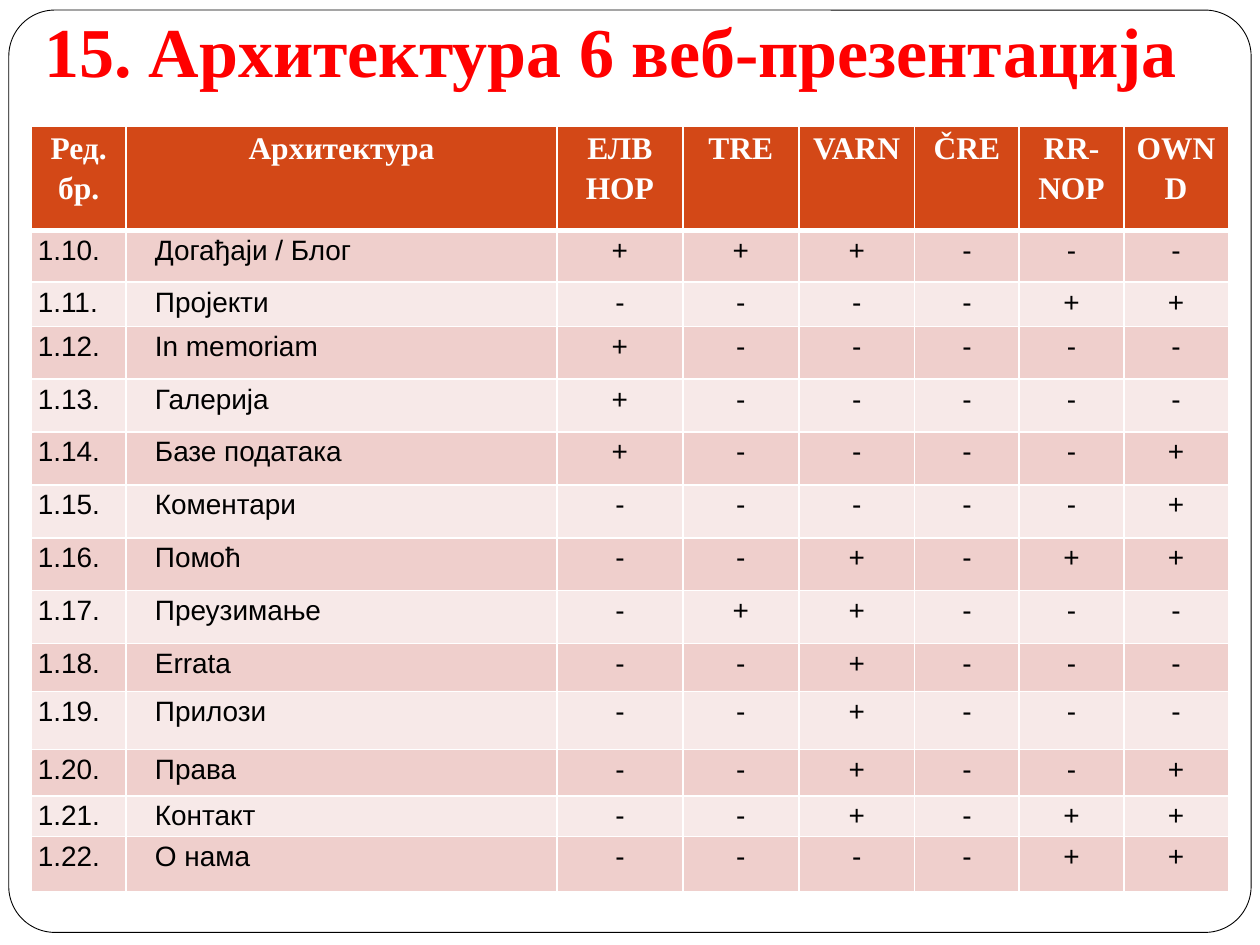
from lxml import etree
from pptx import Presentation, util as u
from pptx.dml.color import RGBColor
from pptx.enum import shapes, text
from pptx.oxml.ns import qn

TITLE = "15. Архитектура 6 веб-презентација"
HEADINGS = ["Ред.\nбр.", "Архитектура", "ЕЛВ\nНОР", "TRE", "VARN", "ČRE", "RR-NOP", "OWND"]
FIRST_NUMBER = 10
FEATURES = [
    ("Догађаји / Блог", "+++---", 0.41),
    ("Пројекти", "----++", 0.35),
    ("In memoriam", "+-----", 0.42),
    ("Галерија", "+-----", 0.42),
    ("Базе података", "+----+", 0.42),
    ("Коментари", "-----+", 0.42),
    ("Помоћ", "--+-++", 0.42),
    ("Преузимање", "-++---", 0.42),
    ("Errata", "--+---", 0.38),
    ("Прилози", "--+---", 0.46),
    ("Права", "--+--+", 0.37),
    ("Контакт", "--+-++", 0.32),
    ("О нама", "----++", 0.44),
]
COLUMN_WIDTHS = [0.75, 3.42, 1, 0.92, 0.92, 0.83, 0.83, 0.83]
HEADER_HEIGHT = 0.83

WHITE = RGBColor(0xFF, 0xFF, 0xFF)
BLACK = RGBColor(0, 0, 0)
RED = RGBColor(0xFF, 0, 0)
ORANGE = RGBColor(0xD3, 0x48, 0x17)
BANDS = [RGBColor(0xEF, 0xCF, 0xCC), RGBColor(0xF7, 0xE9, 0xE8)]


def style_font(font, name, size, color, bold):
    font.name, font.size, font.bold = name, u.Pt(size), bold
    font.color.rgb = color


def set_margins(holder, left, top, right, bottom):
    holder.margin_left, holder.margin_top = u.Inches(left), u.Inches(top)
    holder.margin_right, holder.margin_bottom = u.Inches(right), u.Inches(bottom)


def add_border(cell, side, points):
    properties = cell._tc.get_or_add_tcPr()
    line = etree.SubElement(properties, qn(f"a:ln{side}"), w=str(u.Pt(points)))
    fill = etree.SubElement(line, qn("a:solidFill"))
    etree.SubElement(fill, qn("a:srgbClr"), val=str(WHITE))


def fill_cell(cell, words, row, column):
    header = row == 0
    cell.text_frame.text = words
    indent = 0.18 if column == 1 and not header else 0
    set_margins(cell, 0.05 + indent, 0, 0.05, 0)
    for side in "LRTB":
        beside_header = (row, side) in [(0, "B"), (1, "T")]
        add_border(cell, side, 3 if beside_header else 1)
    cell.fill.solid()
    cell.fill.fore_color.rgb = ORANGE if header else BANDS[(row - 1) % 2]
    for paragraph in cell.text_frame.paragraphs:
        centred = header or column > 1
        paragraph.alignment = text.PP_ALIGN.CENTER if centred else text.PP_ALIGN.LEFT
        paragraph.line_spacing = 1.15
        for span in paragraph.runs:
            if header:
                style_font(span.font, "Times New Roman", 18, WHITE, True)
            else:
                style_font(span.font, "Arial", 16, BLACK, False)


def add_frame(page):
    box = page.shapes.add_shape(
        shapes.MSO_SHAPE.ROUNDED_RECTANGLE,
        u.Inches(0.07), u.Inches(0.08), u.Inches(9.86), u.Inches(7.32))
    box.adjustments[0] = 0.05
    box.shadow.inherit = False
    box.fill.solid()
    box.fill.fore_color.rgb = WHITE
    box.line.color.rgb = BLACK
    box.line.width = u.Pt(0.5)
    page.shapes.title.element.addprevious(box.element)


def set_title(page):
    title = page.shapes.title
    title.left, title.top = u.Inches(0.25), 0
    title.width, title.height = u.Inches(9.42), u.Inches(0.83)
    frame = title.text_frame
    frame.text = TITLE
    frame.auto_size = text.MSO_AUTO_SIZE.NONE
    frame.vertical_anchor = text.MSO_ANCHOR.BOTTOM
    set_margins(frame, 0.1, 0.05, 0.1, 0.1)
    frame.paragraphs[0].alignment = text.PP_ALIGN.LEFT
    style_font(frame.paragraphs[0].runs[0].font, "Times New Roman", 40, RED, True)


def add_feature_table(page):
    rows = [HEADINGS] + [
        [f"1.{number}.", name, *marks]
        for number, (name, marks, _) in enumerate(FEATURES, FIRST_NUMBER)]
    heights = [HEADER_HEIGHT] + [height for _, _, height in FEATURES]
    table = page.shapes.add_table(
        len(rows), len(HEADINGS), u.Inches(0.25), u.Inches(1),
        u.Inches(sum(COLUMN_WIDTHS)), u.Inches(sum(heights))).table
    for column, width in zip(table.columns, COLUMN_WIDTHS):
        column.width = u.Inches(width)
    for row, (height, entries) in enumerate(zip(heights, rows)):
        table.rows[row].height = u.Inches(height)
        for column, words in enumerate(entries):
            fill_cell(table.cell(row, column), words, row, column)


def main():
    deck = Presentation()
    deck.slide_width, deck.slide_height = u.Inches(10), u.Inches(7.5)
    page = deck.slides.add_slide(deck.slide_layouts[5])
    add_frame(page)
    set_title(page)
    add_feature_table(page)
    deck.save("out.pptx")


if __name__ == "__main__":
    main()
